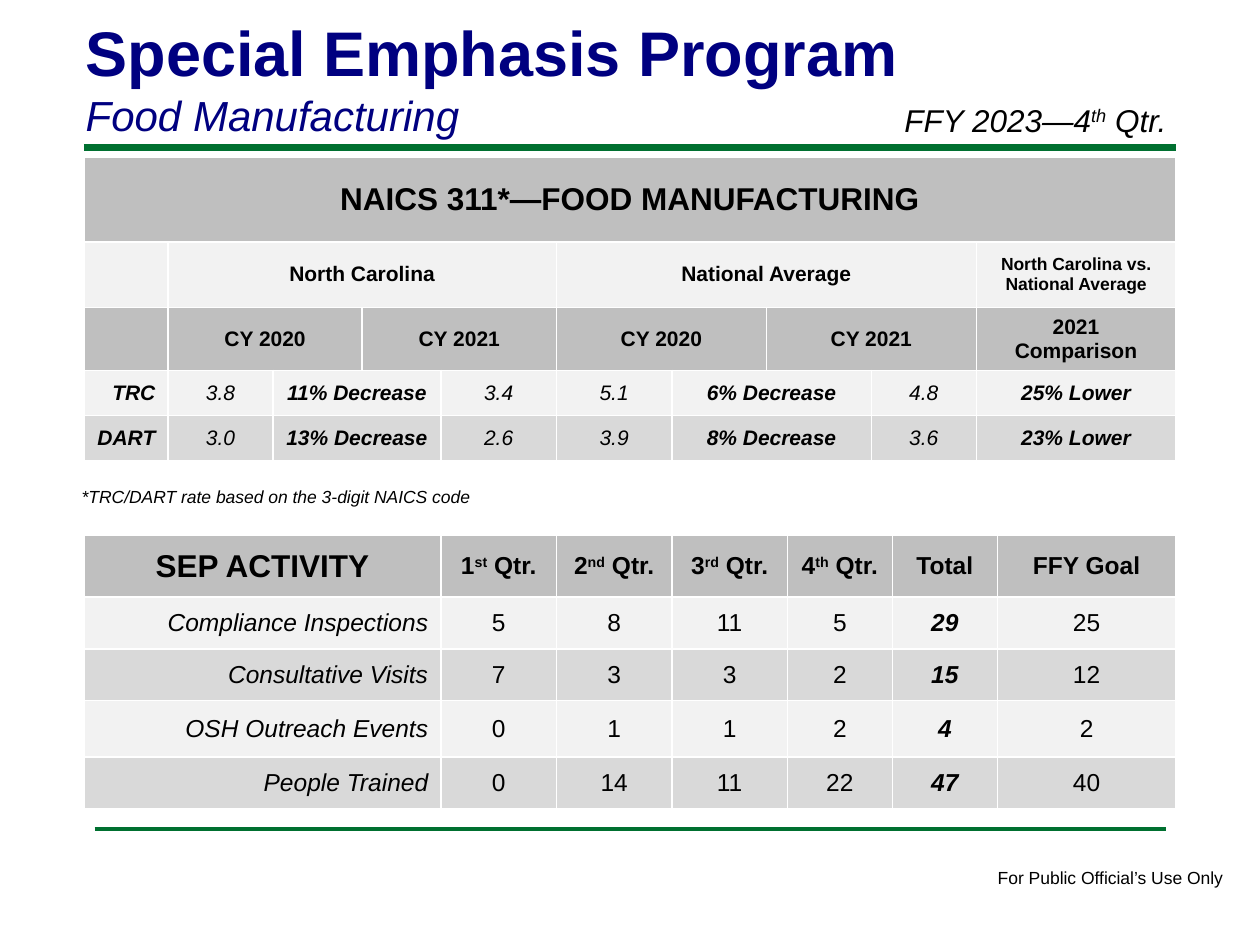
"""Build the Food Manufacturing special emphasis program slide."""
from lxml import etree
from pptx import Presentation
from pptx.dml.color import RGBColor
from pptx.enum.shapes import MSO_CONNECTOR
from pptx.enum.text import MSO_ANCHOR, MSO_AUTO_SIZE, PP_ALIGN
from pptx.oxml.ns import qn
from pptx.util import Inches, Pt

LEFT, CENTER, RIGHT = PP_ALIGN.LEFT, PP_ALIGN.CENTER, PP_ALIGN.RIGHT
MIDDLE, TOP = MSO_ANCHOR.MIDDLE, MSO_ANCHOR.TOP
GROW = MSO_AUTO_SIZE.SHAPE_TO_FIT_TEXT
STRAIGHT = MSO_CONNECTOR.STRAIGHT
NAVY, GREEN, BLACK = "000080", "007030", "000000"
HEADER, LIGHT, DARK = "BFBFBF", "F2F2F2", "D9D9D9"
UNIT = Inches(1) // 12
MARGIN = 8 * UNIT


def hex_color(value):
    return RGBColor.from_string(value)


def write(para, text, size=14, bold=False, italic=False, color=BLACK, align=LEFT):
    """Fill a paragraph; text between carets is superscript."""
    para.alignment = align
    for index, part in enumerate(text.split("^")):
        span = para.add_run()
        span.text = part
        span.font.name = "Arial"
        span.font.size = Pt(size)
        span.font.bold = bold
        span.font.italic = italic
        span.font.color.rgb = hex_color(color)
        if index % 2:
            span.font._element.set("baseline", "30000")


deck = Presentation()
deck.slide_width, deck.slide_height = Inches(10), Inches(7.5)
page = deck.slides.add_slide(deck.slide_layouts[5])

for inset, y, weight in [(8, 1.17, 4), (9, 6.58, 2)]:
    rule = page.shapes.add_connector(
        STRAIGHT, inset * UNIT, Inches(y), deck.slide_width - inset * UNIT, Inches(y))
    rule.line.color.rgb = hex_color(GREEN)
    rule.line.width = Pt(weight)
    etree.SubElement(rule._element.spPr, qn("a:effectLst"))

title = page.shapes.title
title.left, title.top, title.width, title.height = map(Inches, (0.58, 0.06, 8.25, 1.11))
heading = title.text_frame
heading.word_wrap = True
heading.auto_size = GROW
heading.vertical_anchor = TOP
write(heading.paragraphs[0], "Special Emphasis Program", size=36, bold=True, color=NAVY)
write(heading.add_paragraph(), "Food Manufacturing", size=24, italic=True, color=NAVY)

labels = [
    ("For Public Official’s Use Only", (7.82, 6.83, 2.01, 0.27), 10, False, False),
    ("*TRC/DART rate based on the 3-digit NAICS code", (0.55, 3.81, 3.38, 0.27), 10, True, False),
    ("FFY 2023—4^th^ Qtr.", (7.08, 0.75, 2.5, 0.4), 18, True, True),
]
for text, place, size, italic, wrap in labels:
    box = page.shapes.add_textbox(*map(Inches, place))
    box.text_frame.word_wrap = wrap
    box.text_frame.auto_size = GROW
    write(box.text_frame.paragraphs[0], text, size=size, italic=italic)

activity_rows = [
    ["SEP ACTIVITY", "1^st^ Qtr.", "2^nd^ Qtr.", "3^rd^ Qtr.", "4^th^ Qtr.", "Total", "FFY Goal"],
    ["Compliance Inspections", "5", "8", "11", "5", "29", "25"],
    ["Consultative Visits", "7", "3", "3", "2", "15", "12"],
    ["OSH Outreach Events", "0", "1", "1", "2", "4", "2"],
    ["People Trained", "0", "14", "11", "22", "47", "40"],
]
activity_widths = [34, 11, 11, 11, 10, 10, 17]
activity_heights = [0.49, 0.41, 0.41, 0.45, 0.41]
activity = page.shapes.add_table(
    5, 7, MARGIN, Inches(4.25), 104 * UNIT, Inches(sum(activity_heights))).table

for r, values in enumerate(activity_rows):
    for c, text in enumerate(values):
        cell = activity.cell(r, c)
        write(cell.text_frame.paragraphs[0], text,
              size=18 if r == c == 0 else 14,
              bold=r == 0 or c == 5,
              italic=r > 0 and c in (0, 5),
              align=RIGHT if r > 0 and c == 0 else CENTER)

rate_rows = [
    [("NAICS 311*—FOOD MANUFACTURING", 10)],
    [("", 1), ("North Carolina", 4), ("National Average", 4),
     ("North Carolina vs. National Average", 1)],
    [("", 1), ("CY 2020", 2), ("CY 2021", 2), ("CY 2020", 2), ("CY 2021", 2),
     ("2021 Comparison", 1)],
    [("TRC", 1), ("3.8", 1), ("11% Decrease", 2), ("3.4", 1), ("5.1", 1),
     ("6% Decrease", 2), ("4.8", 1), ("25% Lower", 1)],
    [("DART", 1), ("3.0", 1), ("13% Decrease", 2), ("2.6", 1), ("3.9", 1),
     ("8% Decrease", 2), ("3.6", 1), ("23% Lower", 1)],
]
rate_widths = [8, 10, 8.5, 7.5, 11, 11, 9, 10, 10, 19]
rate_heights = [0.67, 0.52, 0.5, 0.36, 0.36]
rate_heights[2] = 0.48
rates = page.shapes.add_table(
    5, 10, MARGIN, Inches(1.25), 104 * UNIT, Inches(sum(rate_heights))).table
rates.first_row = False

for r, values in enumerate(rate_rows):
    c = 0
    for text, columns in values:
        cell = rates.cell(r, c)
        if columns > 1:
            cell.merge(rates.cell(r, c + columns - 1))
        if text:
            write(cell.text_frame.paragraphs[0], text,
                  size=18 if r == 0 else 10 if "vs." in text else 12,
                  bold=not text.replace(".", "").isdigit(),
                  italic=r > 2,
                  align=RIGHT if r > 2 and c == 0 else CENTER)
        c += columns

for table, widths, heights, fills in [
    (activity, activity_widths, activity_heights, [HEADER, LIGHT, DARK, LIGHT, DARK]),
    (rates, rate_widths, rate_heights, [HEADER, LIGHT, HEADER, LIGHT, DARK]),
]:
    for column, width in zip(table.columns, widths):
        column.width = int(width * UNIT)
    for row, height, fill in zip(table.rows, heights, fills):
        row.height = Inches(height)
        for cell in row.cells:
            cell.vertical_anchor = MIDDLE
            cell.fill.solid()
            cell.fill.fore_color.rgb = hex_color(fill)

deck.save("out.pptx")
